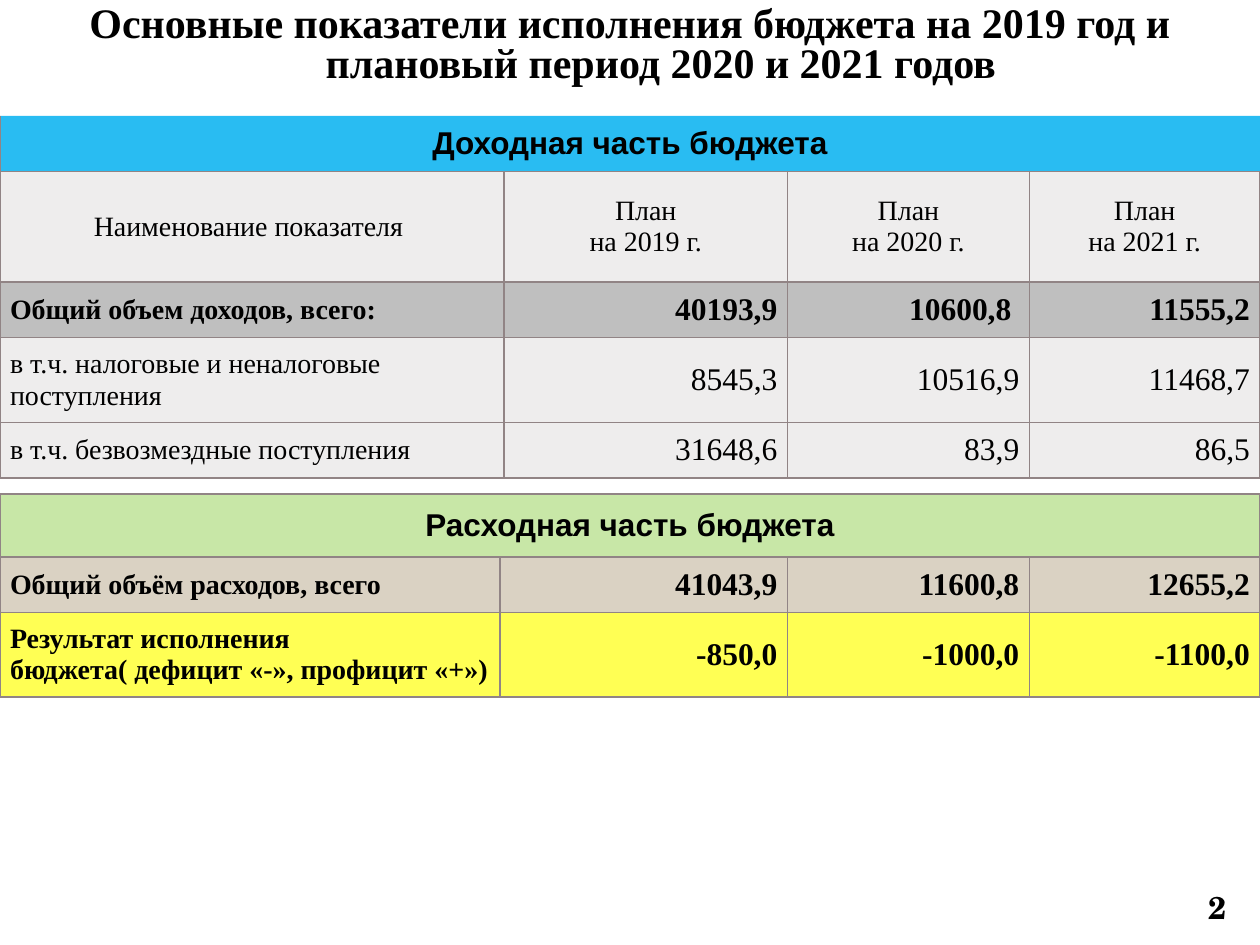
from dataclasses import dataclass

from lxml.etree import SubElement
from pptx import Presentation
from pptx.dml.color import RGBColor
from pptx.enum.text import MSO_ANCHOR, PP_ALIGN
from pptx.oxml import parse_xml
from pptx.oxml.ns import nsdecls, qn
from pptx.util import Inches, Pt


@dataclass(frozen=True)
class Theme:
    serif: str = "Times New Roman"
    sans: str = "Arial"
    number_font: str = "TeX Gyre Schola"
    title_size: int = 24
    value_size: int = 18
    label_size: int = 16
    text: str = "000000"
    border: str = "918485"
    income: tuple = ("00B0F0", 84)
    expense: tuple = ("92D050", 50)
    plain: tuple = ("EEEDED", 100)
    income_total: tuple = ("BFBFBF", 100)
    expense_total: tuple = ("DAD2C3", 100)
    result: tuple = ("FFFF00", 67)


@dataclass
class TableRow:
    height: float
    fill: tuple
    texts: list
    bold: bool = False
    heading: bool = False


class BudgetSlide:
    def __init__(self, presentation, theme):
        self.theme = theme
        self.slide = presentation.slides.add_slide(presentation.slide_layouts[6])

    def style(self, paragraph, size, font, bold, alignment):
        paragraph.alignment = alignment
        paragraph.font.size = Pt(size)
        paragraph.font.name = font
        paragraph.font.bold = bold
        paragraph.font.color.rgb = RGBColor.from_string(self.theme.text)

    def text_box(self, text, box, size, font, alignment, anchor=MSO_ANCHOR.TOP):
        shape = self.slide.shapes.add_textbox(*[Inches(length) for length in box])
        frame = shape.text_frame
        frame.word_wrap = True
        frame.vertical_anchor = anchor
        frame.text = text
        paragraph = frame.paragraphs[0]
        self.style(paragraph, size, font, True, alignment)
        return paragraph

    def title(self, text):
        paragraph = self.text_box(text, (0, 0.17, 10, 0.4), self.theme.title_size,
                                  self.theme.serif, PP_ALIGN.CENTER, MSO_ANCHOR.MIDDLE)
        paragraph.line_spacing = 0.8
        properties = paragraph._p.get_or_add_pPr()
        properties.set("marL", str(Inches(0.49)))
        properties.set("indent", str(Inches(-0.49)))

    def fill_cell(self, cell, fill):
        color, opacity = fill
        cell.fill.solid()
        cell.fill.fore_color.rgb = RGBColor.from_string(color)
        if opacity < 100:
            color_element = cell._tc.tcPr.find(".//" + qn("a:srgbClr"))
            SubElement(color_element, qn("a:alpha")).set("val", str(opacity * 1000))

    def border_cell(self, cell, sides):
        solid = f'<a:solidFill><a:srgbClr val="{self.theme.border}"/></a:solidFill>'
        for index, side in enumerate("LRTB"):
            paint = solid if side in sides else "<a:noFill/>"
            line = parse_xml(f'<a:ln{side} {nsdecls("a")} w="{Pt(1)}">{paint}</a:ln{side}>')
            cell._tc.tcPr.insert(index, line)

    def write_cell(self, cell, text, row, column, is_header):
        theme = self.theme
        cell.margin_left = cell.margin_right = Inches(0.08)
        cell.margin_top = cell.margin_bottom = Inches(0.07)
        cell.vertical_anchor = MSO_ANCHOR.MIDDLE
        cell.text = text
        if is_header or row.heading:
            alignment = PP_ALIGN.CENTER
        else:
            alignment = PP_ALIGN.RIGHT if column else PP_ALIGN.LEFT
        is_label = row.heading or (column == 0 and not is_header)
        size = theme.label_size if is_label else theme.value_size
        font = theme.sans if is_header else theme.serif
        for paragraph in cell.text_frame.paragraphs:
            self.style(paragraph, size, font, row.bold, alignment)

    def table(self, top, widths, rows, header_sides="LRTB"):
        heights = [row.height for row in rows]
        frame = self.slide.shapes.add_table(
            len(rows), len(widths), Inches(0), Inches(top),
            Inches(sum(widths)), Inches(sum(heights)))
        table = frame.table
        table.first_row = table.horz_banding = False
        for column, width in zip(table.columns, widths):
            column.width = Inches(width)
        for row_index, row in enumerate(rows):
            is_header = row_index == 0
            table.rows[row_index].height = Inches(row.height)
            for column_index in range(len(widths)):
                cell = table.cell(row_index, column_index)
                self.fill_cell(cell, row.fill)
                self.border_cell(cell, header_sides if is_header else "LRTB")
            for column_index, text in enumerate(row.texts):
                self.write_cell(table.cell(row_index, column_index), text,
                                row, column_index, is_header)
        table.cell(0, 0).merge(table.cell(0, len(widths) - 1))


def main():
    theme = Theme()
    presentation = Presentation()
    presentation.slide_width = Inches(10)
    presentation.slide_height = Inches(7.5)
    slide = BudgetSlide(presentation, theme)

    slide.text_box("2", (9.33, 7, 0.5, 0.4), theme.value_size,
                   theme.number_font, PP_ALIGN.RIGHT)
    slide.title("Основные показатели исполнения бюджета на 2019 год и "
                "плановый период 2020 и 2021 годов")

    plans = [f"План\nна {year} г." for year in (2019, 2020, 2021)]
    slide.table(0.92, [4, 2.25, 1.92, 1.83], [
        TableRow(0.44, theme.income, ["Доходная часть бюджета"], bold=True),
        TableRow(0.88, theme.plain, ["Наименование показателя ", *plans], heading=True),
        TableRow(0.35, theme.income_total,
                 ["Общий объем доходов, всего:", "40193,9", "10600,8 ", "11555,2"], bold=True),
        TableRow(0.35, theme.plain,
                 ["в т.ч. налоговые и неналоговые поступления", "8545,3", "10516,9", "11468,7"]),
        TableRow(0.35, theme.plain,
                 ["в т.ч. безвозмездные поступления", "31648,6", "83,9", "86,5"]),
    ], header_sides="LB")
    slide.table(3.92, [3.97, 2.28, 1.92, 1.83], [
        TableRow(0.5, theme.expense, ["Расходная часть бюджета"], bold=True),
        TableRow(0.32, theme.expense_total,
                 ["Общий объём расходов, всего", "41043,9", "11600,8", "12655,2"], bold=True),
        TableRow(0.55, theme.result,
                 ["Результат исполнения\vбюджета( дефицит «-», профицит «+»)",
                  "-850,0", "-1000,0", "-1100,0"], bold=True),
    ])
    presentation.save("out.pptx")


if __name__ == "__main__":
    main()
